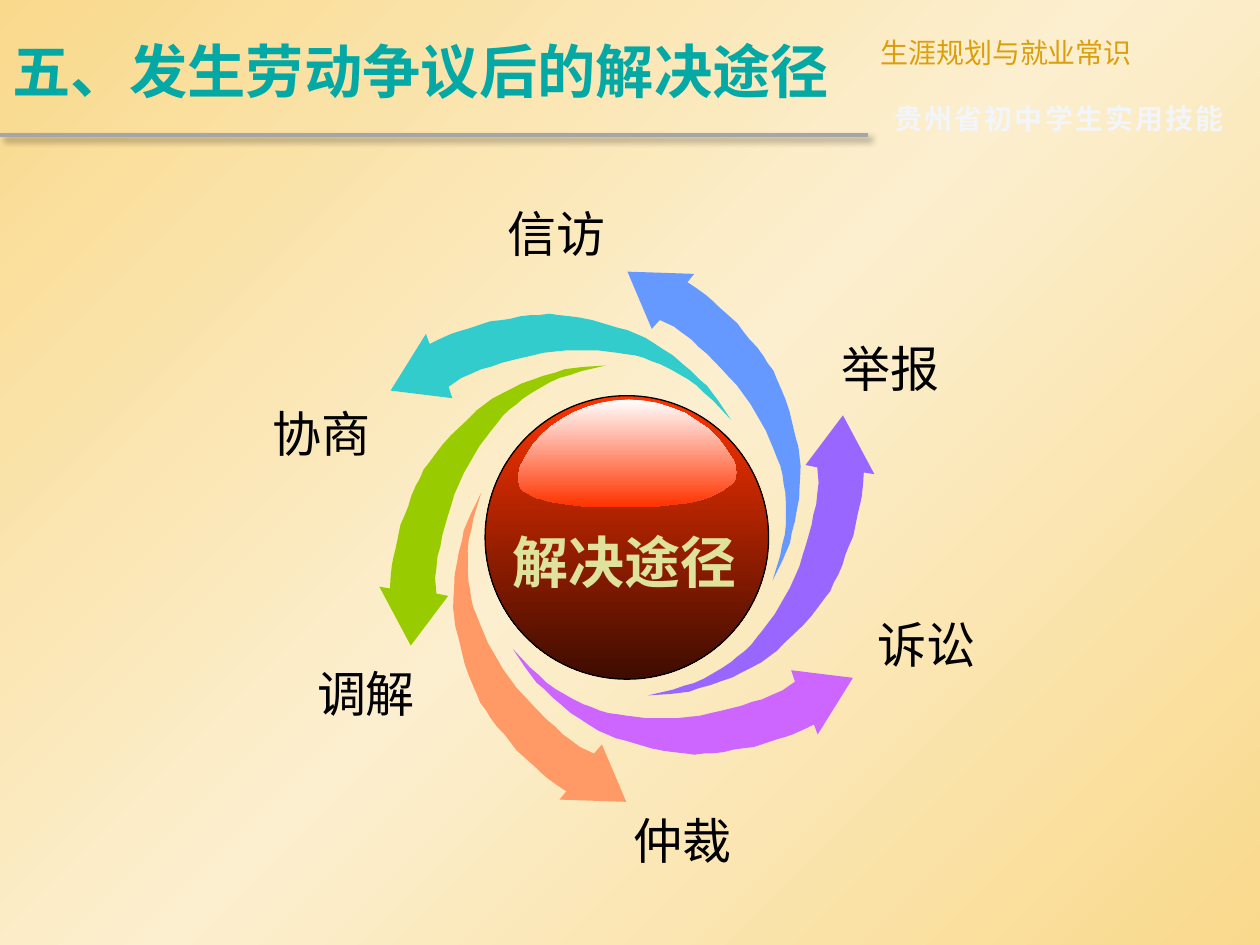
from copy import deepcopy

from lxml import etree
from pptx import Presentation
from pptx.dml.color import RGBColor
from pptx.enum.shapes import MSO_CONNECTOR, MSO_SHAPE
from pptx.enum.text import MSO_ANCHOR, MSO_AUTO_SIZE, PP_ALIGN
from pptx.oxml import parse_xml
from pptx.oxml.ns import nsdecls, qn
from pptx.util import Inches, Pt

STRAIGHT = MSO_CONNECTOR.STRAIGHT
OVAL = MSO_SHAPE.OVAL
MIDDLE = MSO_ANCHOR.MIDDLE
FIT_SHAPE, FIXED_SIZE = MSO_AUTO_SIZE.SHAPE_TO_FIT_TEXT, MSO_AUTO_SIZE.NONE
LEFT, CENTER, JUSTIFY = PP_ALIGN.LEFT, PP_ALIGN.CENTER, PP_ALIGN.JUSTIFY

FONT = "Noto Sans CJK SC"
COLUMNS, ROWS = 100, 75
CELL = Inches(0.1)

BLACK = RGBColor(0x00, 0x00, 0x00)
WHITE = RGBColor(0xFF, 0xFF, 0xFF)
SAND = RGBColor(0xF9, 0xD9, 0x8C)
CREAM = RGBColor(0xFC, 0xEF, 0xCF)
TEAL = RGBColor(0x04, 0xA8, 0xA4)
GOLD = RGBColor(0xDC, 0x9F, 0x0C)
PALE = RGBColor(0xF2, 0xF5, 0xFA)
GRAY = RGBColor(0xA6, 0xA6, 0xA6)
RED = RGBColor(0xFF, 0x33, 0x00)
MAROON = RGBColor(0x3E, 0x0C, 0x00)
LIME = RGBColor(0xDF, 0xE2, 0x9A)

# Outlines in tenths of a grid cell, from the top left of each outline
ARROW = [
    (224, 26), (221, 17), (270, 23), (242, 68), (239, 60), (231, 64), (222, 68), (216, 70),
    (209, 72), (200, 75), (191, 78), (182, 79), (175, 80), (167, 82), (158, 83), (152, 83),
    (144, 84), (137, 83), (128, 82), (120, 81), (110, 79), (100, 76), (90, 73), (82, 71),
    (75, 68), (68, 65), (60, 60), (54, 56), (46, 51), (38, 44), (32, 39), (25, 32),
    (19, 27), (16, 23), (10, 15), (0, 0), (14, 15), (21, 21), (27, 27), (34, 32),
    (41, 36), (48, 40), (56, 44), (62, 46), (69, 49), (76, 51), (84, 52), (90, 53),
    (98, 54), (106, 55), (113, 55), (120, 55), (130, 55), (140, 54), (149, 53), (157, 51),
    (166, 49), (174, 47), (182, 45), (190, 42), (198, 40), (207, 36), (214, 33),
]
GLOSS = [
    (171, 48), (173, 53), (174, 58), (173, 62), (171, 66), (167, 69), (163, 72), (157, 75),
    (151, 78), (144, 80), (136, 82), (127, 83), (118, 84), (108, 85), (63, 85), (54, 85),
    (46, 84), (38, 83), (31, 82), (25, 81), (19, 79), (14, 78), (9, 75), (5, 73),
    (2, 70), (1, 66), (0, 62), (1, 58), (2, 53), (7, 44), (12, 36), (19, 28),
    (27, 21), (36, 15), (45, 10), (55, 6), (65, 3), (76, 1), (88, 0), (100, 1),
    (111, 3), (123, 7), (133, 11), (142, 17), (151, 23), (159, 31), (165, 39),
]

# Column, row and colour; each arrow is turned 60 degrees further than the one before
ARROWS = [
    (40.7, 51.5, RGBColor(0xCC, 0x66, 0xFF)),
    (27.8, 48.7, RGBColor(0xFF, 0x99, 0x66)),
    (24.2, 34.4, RGBColor(0x99, 0xCC, 0x00)),
    (31.0, 24.9, RGBColor(0x33, 0xCC, 0xCC)),
    (44.7, 28.1, RGBColor(0x66, 0x99, 0xFF)),
    (48.3, 41.4, RGBColor(0x99, 0x66, 0xFF)),
]
LABELS = [
    ("诉讼", 68.6, 48.3), ("举报", 65.7, 26.4), ("协商", 20.6, 31.5),
    ("调解", 24.1, 52.2), ("仲裁", 49.2, 63.8), ("信访", 39.2, 15.7),
]


def cells(*lengths):
    return [round(length * CELL) for length in lengths]


class SlideBuilder:
    """Holds the style, the slide and the shape collection being filled."""

    def __init__(self, presentation):
        self.slide = presentation.slides.add_slide(presentation.slide_layouts[5])
        self.shapes = self.slide.shapes

    def start_group(self):
        self.shapes = self.slide.shapes.add_group_shape().shapes

    def gradient(self, fill, first, last, angle):
        fill.gradient()
        fill.gradient_angle = angle
        for stop, color, position in zip(fill.gradient_stops, (first, last), (0, 1)):
            stop.color.rgb = color
            stop.position = position

    def background(self, edge, middle):
        fill = self.slide.background.fill
        self.gradient(fill, edge, edge, 315)
        stops = self.slide.element.find(".//" + qn("a:gsLst"))
        stops.insert(1, deepcopy(stops[0]))
        fill.gradient_stops[1].position = 0.5
        fill.gradient_stops[1].color.rgb = middle

    def styled_run(self, frame, text, size, color, alignment, bold=False, spacing=0):
        paragraph = frame.paragraphs[0]
        paragraph.alignment = alignment
        run = paragraph.add_run()
        run.text = text
        run.font.size = Pt(size)
        run.font.bold = bold
        run.font.color.rgb = color
        run.font.name = FONT
        properties = run.font._element
        etree.SubElement(properties, qn("a:ea")).set("typeface", FONT)
        if spacing:
            properties.set("spc", str(spacing))

    def title(self, box, text, size, color):
        shape = self.slide.shapes.title
        shape.left, shape.top, shape.width, shape.height = cells(*box)
        shape.text_frame.vertical_anchor = MIDDLE
        shape.text_frame.auto_size = FIXED_SIZE
        self.styled_run(shape.text_frame, text, size, color, LEFT, bold=True)

    def text(self, box, text, size, color, alignment=CENTER, wrap=True, **style):
        frame = self.shapes.add_textbox(*cells(*box)).text_frame
        frame.word_wrap = wrap
        frame.auto_size = FIT_SHAPE
        self.styled_run(frame, text, size, color, alignment, **style)

    def shadowed_rule(self, start, end, color, width):
        line = self.shapes.add_connector(STRAIGHT, *cells(*start, *end))
        line.line.color.rgb = color
        line.line.width = Pt(width)
        line._element.spPr.append(parse_xml(
            f'<a:effectLst {nsdecls("a")}>'
            f'<a:outerShdw blurRad="{Pt(4)}" dist="{Pt(3)}" dir="2700000" algn="tl" rotWithShape="0">'
            '<a:srgbClr val="000000"><a:alpha val="40000"/></a:srgbClr>'
            '</a:outerShdw></a:effectLst>'))

    def outline(self, points, column, row, rotation=0):
        builder = self.shapes.build_freeform(*points[0], scale=CELL / 10)
        builder.add_line_segments(points[1:], close=True)
        shape = builder.convert_to_shape(*cells(column, row))
        shape.rotation = rotation
        shape.shadow.inherit = False
        shape.line.fill.background()
        return shape

    def arrow(self, column, row, rotation, color):
        fill = self.outline(ARROW, column, row, rotation).fill
        fill.solid()
        fill.fore_color.rgb = color

    def gloss(self, column, row):
        self.gradient(self.outline(GLOSS, column, row).fill, WHITE, RED, 270)

    def ball(self, box):
        shape = self.shapes.add_shape(OVAL, *cells(*box))
        shape.shadow.inherit = False
        self.gradient(shape.fill, RED, MAROON, 270)
        shape.line.color.rgb = BLACK
        shape.line.width = Pt(0.75)


def main():
    presentation = Presentation()
    presentation.slide_width, presentation.slide_height = cells(COLUMNS, ROWS)
    builder = SlideBuilder(presentation)

    builder.background(SAND, CREAM)
    builder.shadowed_rule((0, 10.7), (68.9, 10.7), GRAY, 2.25)
    builder.title((0, 0.5, 68.9, 10.2), "五、发生劳动争议后的解决途径", 33.3, TEAL)
    builder.text((68.9, 2.3, 31.1, 3.7), "生涯规划与就业常识", 16, GOLD, JUSTIFY)
    builder.text((70, 7.6, 30, 3.7), "贵州省初中学生实用技能", 16, PALE, LEFT,
                 bold=True, spacing=130)

    for index, (column, row, color) in enumerate(ARROWS):
        builder.arrow(column, row, index * 60, color)
    for label, column, row in LABELS:
        builder.text((column, row, 9.9, 5.7), label, 28, BLACK, wrap=False)

    builder.start_group()
    builder.ball((38.5, 31.4, 22.5, 22.5))
    builder.gloss(41.1, 31.7)
    builder.text((39.2, 41.4, 20.8, 6.4), "解决途径", 32, LIME, bold=True)

    presentation.save("out.pptx")


if __name__ == "__main__":
    main()
